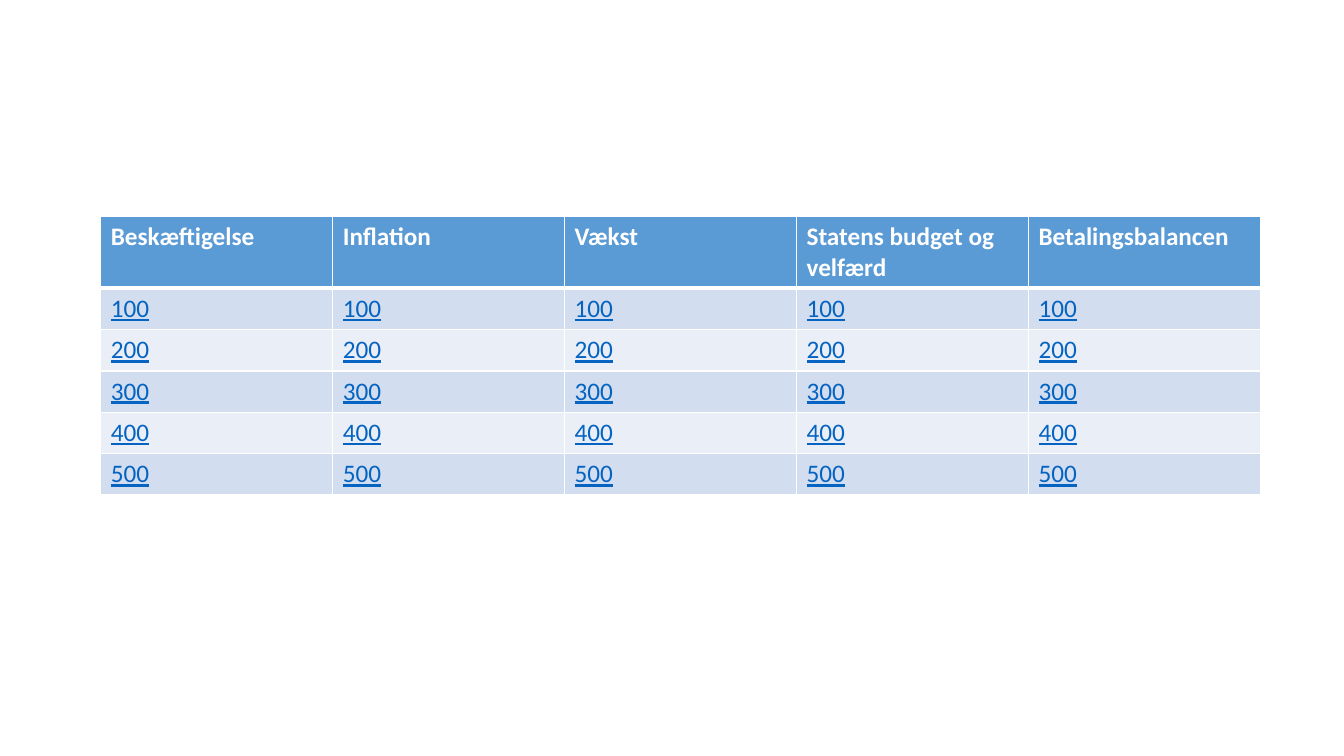
import lxml.etree
import pptx
import pptx.dml.color
import pptx.oxml.ns
import pptx.util

Inches = pptx.util.Inches
Pt = pptx.util.Pt
RGBColor = pptx.dml.color.RGBColor
qn = pptx.oxml.ns.qn

WHITE = RGBColor(0xFF, 0xFF, 0xFF)
BLUE = RGBColor(0x5B, 0x9B, 0xD5)
BANDS = (RGBColor(0xD2, 0xDE, 0xEF), RGBColor(0xEA, 0xEF, 0xF7))
LINK = RGBColor(0x05, 0x63, 0xC1)

FONT = "Calibri"
TOPICS = ["Beskæftigelse", "Inflation", "Vækst",
          "Statens budget og velfærd", "Betalingsbalancen"]
POINTS = range(100, 600, 100)

# Grid in inches
LEFT, TOP = 1, 2.15
COL, ROW = 2.3, 0.41


def edge(cell, side, width):
    """Draw one white border of a cell."""
    props = cell._tc.get_or_add_tcPr()
    line = lxml.etree.SubElement(props, qn("a:ln" + side), w=str(Pt(width)))
    fill = lxml.etree.SubElement(line, qn("a:solidFill"))
    lxml.etree.SubElement(fill, qn("a:srgbClr"), val=str(WHITE))


def style(cell, text, fill, color, head, widths):
    """Fill a cell with text, borders and colours."""
    for side, width in zip("LRTB", widths):
        edge(cell, side, width)
    cell.fill.solid()
    cell.fill.fore_color.rgb = fill
    cell.text_frame.text = text
    font = cell.text_frame.paragraphs[0].runs[0].font
    font.name = FONT
    font.size = Pt(18)
    font.bold = head
    font.underline = not head
    font.color.rgb = color


def board(slide):
    """Add the quiz board: topics on top, points below."""
    cols, rows = len(TOPICS), len(POINTS) + 1
    frame = slide.shapes.add_table(rows, cols, Inches(LEFT), Inches(TOP),
                                   Inches(COL * cols), Inches(ROW * rows))
    table = frame.table
    for col in table.columns:
        col.width = Inches(COL)
    for row in table.rows:
        row.height = Inches(ROW)

    # Header row, with a thick rule below
    for c, topic in enumerate(TOPICS):
        style(table.cell(0, c), topic, BLUE, WHITE, True, (1, 1, 1, 3))

    # Banded rows of points
    for r, value in enumerate(POINTS, 1):
        top = 3 if r == 1 else 1
        for c in range(cols):
            style(table.cell(r, c), str(value), BANDS[(r - 1) % 2], LINK,
                  False, (1, 1, top, 1))


def main():
    deck = pptx.Presentation()
    deck.slide_width = Inches(13.33)
    deck.slide_height = Inches(7.5)
    slide = deck.slides.add_slide(deck.slide_layouts[6])
    board(slide)
    deck.save("out.pptx")


if __name__ == "__main__":
    main()
